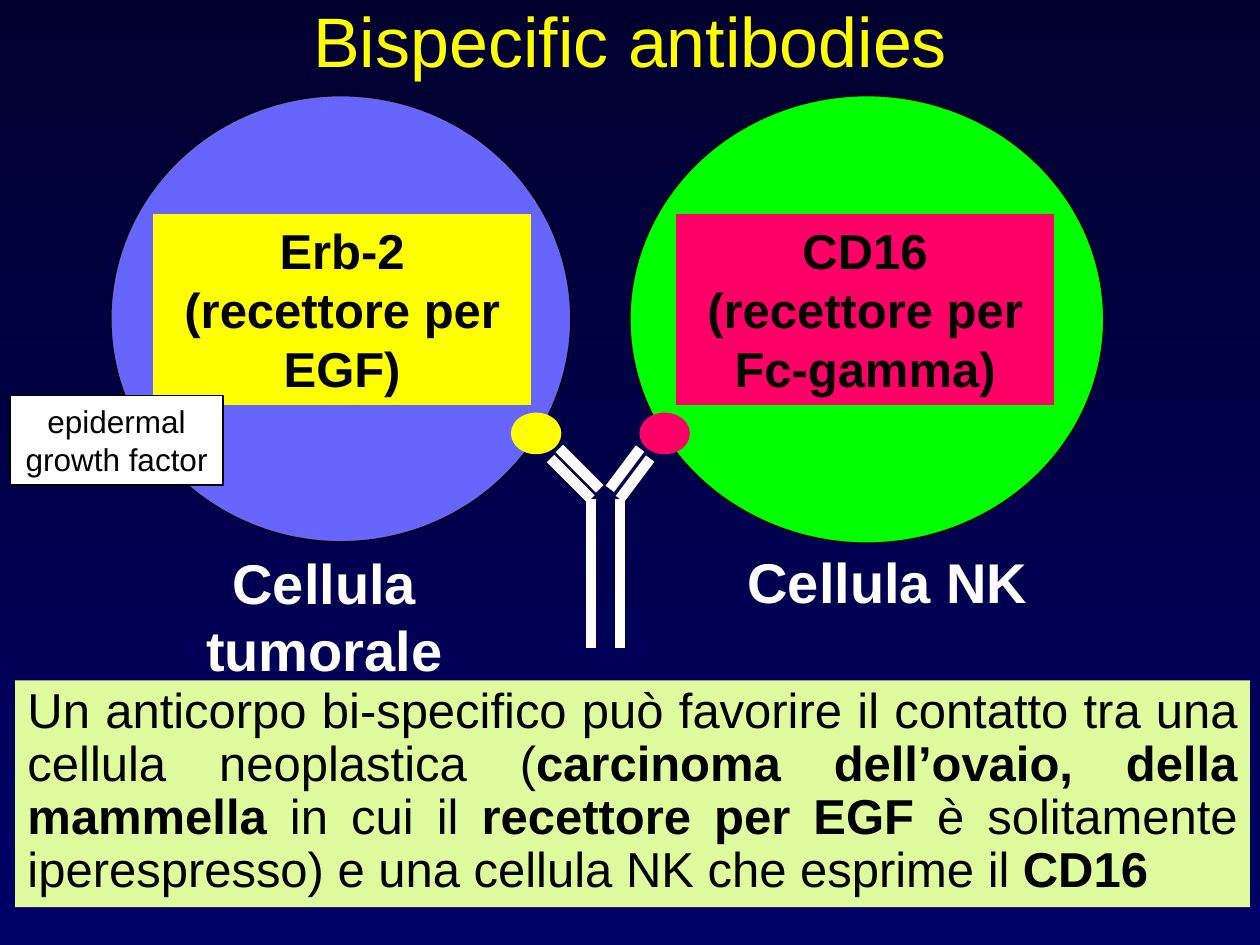
from pptx import Presentation
from pptx.dml.color import RGBColor as RGB
from pptx.enum.shapes import MSO_CONNECTOR as Link, MSO_SHAPE as Shape
from pptx.enum.text import MSO_ANCHOR as Anchor, PP_ALIGN as Align
from pptx.util import Inches, Pt
from lxml.etree import SubElement
from pptx.oxml.ns import qn

THEME = {
    "font": "Arial",
    "color": {"top": "00002F", "base": "000066", "blue": "6666FF", "green": "00FF00",
              "pink": "FF0066", "yellow": "FFFF00", "lime": "DEFB9D",
              "white": "FFFFFF", "black": "000000"},
    "size": {"title": 40, "name": 32, "body": 28, "note": 18},
    "edge": 0.75, "chain": 6,
}

# Content: kind, (left, top, width, height), fill, line
CELLS = [
    ("oval", (0.88, 0.76, 3.65, 3.54), "blue", "black"),
    ("oval", (5, 0.76, 3.76, 3.55), "green", "black"),
]
SITES = [
    ("oval", (4.06, 3.28, 0.39, 0.32), "yellow", "yellow"),
    ("oval", (5.08, 3.28, 0.39, 0.32), "pink", "pink"),
]

# Each half: stem x, inner arm x, sideways reach of the arms
HALVES = [(4.69, 4.76, -0.32), (4.92, 4.84, 0.24)]
FORK, FOOT, INNER, RISE = 3.96, 5.14, 3.88, 0.32

# Text: place, fill, line, size, colour, bold, words
LABELS = [
    ((0.83, 4.3, 3.49, 1.18), None, None, "name", "white", True, "Cellula tumorale"),
    ((5.55, 4.3, 2.99, 0.63), None, None, "name", "white", True, "Cellula NK"),
    ((5.37, 1.7, 2.99, 1.51), "pink", "pink", "body", "black", True,
     "CD16 (recettore per Fc-gamma)"),
    ((1.22, 1.7, 2.99, 1.51), "yellow", "yellow", "body", "black", True,
     "Erb-2 (recettore per EGF)"),
    ((0.08, 3.14, 1.69, 0.71), "white", "black", "note", "black", False,
     "epidermal growth factor"),
]
TITLE = ((0.5, -0.03, 9, 0.69), "Bispecific antibodies")
BODY_AT = (0.12, 5.4, 9.8, 1.8)
BODY = [
    ("Un anticorpo bi-specifico può favorire il contatto tra una cellula neoplastica (", False),
    ("carcinoma dell’ovaio, della mammella", True),
    (" in cui il ", False),
    ("recettore per EGF ", True),
    ("è solitamente iperespresso) e una cellula NK che esprime il ", False),
    ("CD16", True),
]


def tone(name):
    return RGB.from_string(THEME["color"][name])


def draw(slide, kind, at, fill, line):
    form = Shape.OVAL if kind == "oval" else Shape.RECTANGLE
    item = slide.shapes.add_shape(form, *map(Inches, at))
    item.shadow.inherit = False
    item.fill.solid()
    item.fill.fore_color.rgb = tone(fill)
    if line:
        item.line.color.rgb = tone(line)
        item.line.width = Pt(THEME["edge"])
    else:
        item.line.fill.background()
    return item


def write(item, runs, size, ink, align=Align.CENTER, anchor=Anchor.TOP, pitch=None):
    frame = item.text_frame
    frame.word_wrap = True
    frame.vertical_anchor = anchor
    para = frame.paragraphs[0]
    para.alignment = align
    if pitch:
        para.line_spacing = pitch
    for words, bold in runs:
        run = para.add_run()
        run.text = words
        font = run.font
        font.name, font.size, font.bold = THEME["font"], Pt(THEME["size"][size]), bold
        font.color.rgb = tone(ink)


def chain(slide, start, end):
    line = slide.shapes.add_connector(Link.STRAIGHT, *map(Inches, start + end))
    line.line.color.rgb = tone("white")
    line.line.width = Pt(THEME["chain"])
    SubElement(line._element.spPr, qn("a:effectLst"))


def main():
    deck = Presentation()
    deck.slide_width, deck.slide_height = Inches(10), Inches(7.5)
    slide = deck.slides.add_slide(deck.slide_layouts[6])

    # Background, dark at the top
    back = slide.background.fill
    back.gradient()
    back.gradient_angle = 270
    for stop, name in zip(back.gradient_stops, ("top", "base")):
        stop.color.rgb = tone(name)

    # Cells
    for cell in CELLS:
        draw(slide, *cell)

    # Antibody: a stem and two arms on each side
    for stem, arm, reach in HALVES:
        chain(slide, (stem, FORK), (stem, FOOT))
        for x, y in ((stem, FORK), (arm, INNER)):
            chain(slide, (x, y), (x + reach, y - RISE))

    # Binding sites
    for site in SITES:
        draw(slide, *site)

    # Labels
    for at, fill, line, size, ink, bold, words in LABELS:
        if fill:
            item = draw(slide, "box", at, fill, line)
        else:
            item = slide.shapes.add_textbox(*map(Inches, at))
        write(item, [(words, bold)], size, ink)

    # Body text and title
    write(draw(slide, "box", BODY_AT, "lime", None), BODY, "body", "black",
          Align.JUSTIFY, pitch=0.9)
    at, words = TITLE
    write(slide.shapes.add_textbox(*map(Inches, at)), [(words, False)],
          "title", "yellow", anchor=Anchor.MIDDLE)

    deck.save("out.pptx")


if __name__ == "__main__":
    main()
